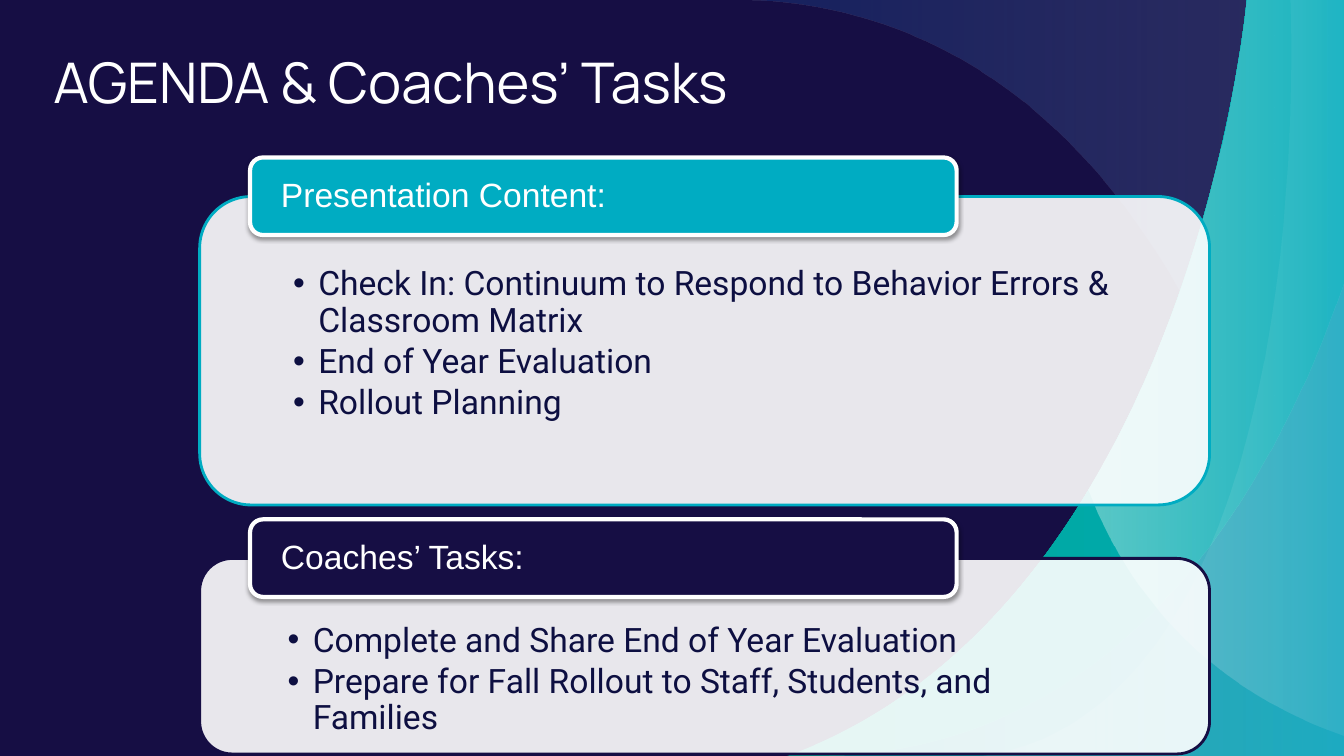
from lxml import etree
from pptx import Presentation
from pptx.dml.color import RGBColor
from pptx.enum.shapes import MSO_SHAPE
from pptx.enum.text import MSO_ANCHOR, MSO_AUTO_SIZE, PP_ALIGN
from pptx.oxml.ns import qn
from pptx.util import Pt

ROUNDED = MSO_SHAPE.ROUNDED_RECTANGLE
TOP, MIDDLE = MSO_ANCHOR.TOP, MSO_ANCHOR.MIDDLE
LEFT = PP_ALIGN.LEFT
NO_AUTOFIT = MSO_AUTO_SIZE.NONE

NAVY, TEAL, WHITE, INK = "160E44", "00ACC2", "FFFFFF", "0D0F41"


def paint(shape, *stops, line=None, line_width=0):
    """Fill with one (hex, opacity %) stop or a left-to-right gradient of two."""
    if len(stops) == 1:
        shape.fill.solid()
        shape.fill.fore_color.rgb = RGBColor.from_string(stops[0][0])
    else:
        shape.fill.gradient()
        shape.fill.gradient_angle = 0
        for gradient_stop, (colour, _) in zip(shape.fill.gradient_stops, stops):
            gradient_stop.color.rgb = RGBColor.from_string(colour)
    colour_elements = shape.element.spPr.iter(qn("a:srgbClr"))
    for element, (_, opacity) in zip(list(colour_elements), stops):
        etree.SubElement(element, qn("a:alpha"), val=str(opacity * 1000))
    if line:
        shape.line.color.rgb = RGBColor.from_string(line)
        shape.line.width = Pt(line_width)
    else:
        shape.line.fill.background()
    shape.shadow.inherit = False


def write_text(shape, *texts, font, size, colour, insets, anchor=TOP,
               line_spacing=1.0, space_after=0, bullet=None):
    frame = shape.text_frame
    frame.word_wrap = True
    frame.auto_size = NO_AUTOFIT
    frame.vertical_anchor = anchor
    (frame.margin_left, frame.margin_top,
     frame.margin_right, frame.margin_bottom) = [Pt(inset) for inset in insets]
    frame.text = "\n".join(texts)
    for paragraph in frame.paragraphs:
        paragraph.alignment = LEFT
        paragraph.line_spacing = line_spacing
        paragraph.space_before = Pt(0)
        paragraph.space_after = Pt(space_after)
        run_font = paragraph.runs[0].font
        run_font.name = font
        run_font.size = Pt(size)
        run_font.color.rgb = RGBColor.from_string(colour)
        if bullet:
            properties = paragraph._p.get_or_add_pPr()
            properties.set("marL", str(Pt(18)))
            properties.set("indent", str(Pt(-18)))
            etree.SubElement(properties, qn("a:buFont"), typeface="Arial")
            etree.SubElement(properties, qn("a:buChar"), char=bullet)


presentation = Presentation()
presentation.slide_width = Pt(960)
presentation.slide_height = Pt(540)
slide = presentation.slides.add_slide(presentation.slide_layouts[5])
slide.background.fill.solid()
slide.background.fill.fore_color.rgb = RGBColor.from_string(NAVY)

# Background waves: two numbers are a corner, six are a cubic curve
BLEED = 1024.6
SKY, BLUE = ("8AAFDC", 18), ("114CA0", 29)
waves = [
    ([(947.5, 540), (947.5, 540, 894.2, 0, 520.6, 0), (965.5, 0), (965.5, 540)],
     [BLUE, SKY]),
    ([(BLEED, 0), (BLEED, 540), (562.3, 540),
      (851, 434.9, 909.4, 0, 909.4, 0)],
     [("12102F", 54)]),
    ([(562.3, 540), (BLEED, 540), (BLEED, 0), (890.6, 0),
      (890.6, 0, 873.4, 190.8, 777.6, 349.9),
      (728.6, 431.3, 659.5, 504.7, 562.3, 540)],
     [("00A791", 100), (TEAL, 100)]),
    ([(777.6, 349.9), (846, 528.5, BLEED, 540, BLEED, 540), (BLEED, 0),
      (890.6, 0), (890.6, 0, 873.4, 190.8, 777.6, 349.9)],
     [(WHITE, 36), (WHITE, 0)]),
    ([(921.6, 0), (921.6, 0, 946.1, 503.3, 701.3, 540), (BLEED, 540), (BLEED, 0)],
     [(WHITE, 18), (WHITE, 0)]),
    ([(1006.6, 0), (1006.6, 0, 953.3, 540, 579.6, 540), (BLEED, 540), (BLEED, 0)],
     [BLUE, SKY]),
]
for segments, stops in waves:
    corners = [(Pt(segment[-2]), Pt(segment[-1])) for segment in segments]
    builder = slide.shapes.build_freeform(*corners[0])
    builder.add_line_segments(corners[1:], close=False)
    wave = builder.convert_to_shape()
    outline = next(wave.element.iter(qn("a:path" )))
    for command, segment in zip(list(outline), segments):
        if len(segment) == 6:
            curve = etree.Element(qn("a:cubicBezTo"))
            for x, y in zip(segment[::2], segment[1::2]):
                etree.SubElement(curve, qn("a:pt"), x=str(Pt(x) - wave.left),
                                 y=str(Pt(y) - wave.top))
            outline.replace(command, curve)
    etree.SubElement(outline, qn("a:close"))
    paint(wave, *stops)

# Agenda panels, each with a heading tab over its top edge
panels = [
    ("Presentation Content:", TEAL, 140.4, 220.3,
     ["Check In: Continuum to Respond to Behavior Errors & Classroom Matrix",
      "End of Year Evaluation",
      "Rollout Planning"]),
    ("Coaches’ Tasks:", NAVY, 398.9, 139.7,
     ["Complete and Share End of Year Evaluation",
      "Prepare for Fall Rollout to Staff, Students, and Families"]),
]
for heading, colour, top, height, items in panels:
    panel = slide.shapes.add_shape(ROUNDED, Pt(142.6), Pt(top), Pt(721.4), Pt(height))
    paint(panel, (WHITE, 90), line=colour, line_width=2)
    write_text(panel, *items, font="Roboto", size=24, colour=INK,
               insets=(56, 39.4, 56, 13.7), line_spacing=0.9, space_after=3.6,
               bullet="•")

    tab = slide.shapes.add_shape(ROUNDED, Pt(178.6), Pt(top - 27.9), Pt(504.7), Pt(55.4))
    paint(tab, (colour, 100), line=WHITE, line_width=3)
    effects = tab.element.spPr.find(qn("a:effectLst"))
    shadow = etree.SubElement(effects, qn("a:outerShdw"), blurRad=str(Pt(3.1)),
                              dist=str(Pt(1.6)), dir="5400000", rotWithShape="0")
    shadow_colour = etree.SubElement(shadow, qn("a:srgbClr"), val="000000")
    etree.SubElement(shadow_colour, qn("a:alpha"), val="38000")
    write_text(tab, heading, font="Arial", size=24, colour=WHITE,
               insets=(19.4, 0, 19.4, 0), anchor=MIDDLE, line_spacing=0.9)

title = slide.shapes.title
title.left, title.top, title.width, title.height = Pt(28.8), Pt(24.5), Pt(738.7), Pt(66.2)
write_text(title, "AGENDA & Coaches’ Tasks", font="Manrope", size=40, colour=WHITE,
           insets=(9.4, 9.4, 9.4, 9.4))
title.element.getparent().append(title.element)

presentation.save("out.pptx")
